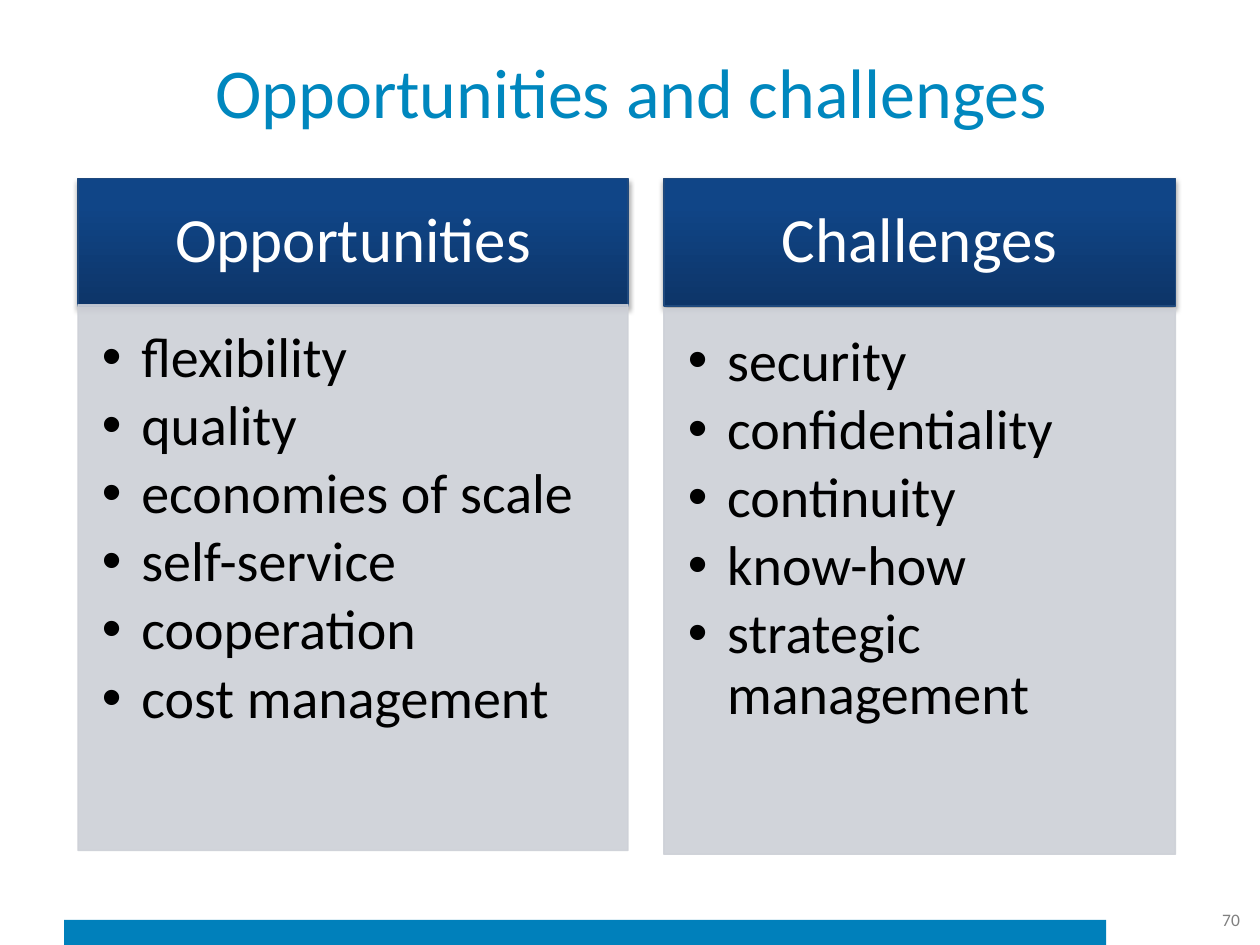
from lxml.etree import SubElement
from pptx import Presentation
from pptx.dml.color import RGBColor
from pptx.enum.shapes import MSO_SHAPE
from pptx.enum.text import MSO_ANCHOR, PP_ALIGN
from pptx.oxml.ns import qn
from pptx.util import Pt

COLORS = {
    "bar": "0080BB", "title": "0087BE", "number": "808080",
    "dark": "0D3568", "mid": "104587", "light": "0E458A",
    "edge": "1F497D", "panel": "CDD0D7", "white": "FFFFFF", "black": "000000",
}
STOPS = ((0, "dark"), (80, "mid"), (100, "light"))
HEADER_TOP, HEADER_H, BODY_H = 102.2, 72.7, 311.8
COLUMNS = (
    ("Challenges", 379.4, 292.3, 176.4,
     ("security", "confidentiality", "continuity", "know-how",
      "strategic management")),
    ("Opportunities", 44.6, 314.3, 174.2,
     ("flexibility", "quality", "economies of scale", "self-service",
      "cooperation", "cost management")),
)


def rgb(name):
    """Return the named colour."""
    return RGBColor.from_string(COLORS[name])


def sub(parent, tag, **attrs):
    """Append a DrawingML element with attributes."""
    return SubElement(parent, qn(tag), {k: str(v) for k, v in attrs.items()})


def apply(obj, **values):
    """Set several attributes on an object."""
    for name, value in values.items():
        setattr(obj, name, value)


def add_run(p, text, size, color):
    """Add a formatted run to a paragraph."""
    r = p.add_run()
    r.text = text
    apply(r.font, size=Pt(size), name="Calibri")
    r.font.color.rgb = rgb(color)


def set_frame(tf, anchor, left, top, right, bottom):
    """Set wrapping, anchor and insets of a text frame."""
    apply(tf, word_wrap=True, vertical_anchor=anchor,
          margin_left=Pt(left), margin_top=Pt(top),
          margin_right=Pt(right), margin_bottom=Pt(bottom))


def add_rect(s, box, fill, line=None):
    """Add a plain rectangle without shadow."""
    sp = s.shapes.add_shape(MSO_SHAPE.RECTANGLE, *map(Pt, box))
    sp.fill.solid()
    sp.fill.fore_color.rgb = rgb(fill)
    if line:
        sp.line.color.rgb = rgb(line)
        sp.line.width = Pt(0.75)
    else:
        sp.line.fill.background()
    sp.shadow.inherit = False
    return sp


def add_gradient(sp):
    """Replace the solid fill by the vertical header gradient."""
    sp_pr = sp._element.spPr
    solid = sp_pr.find(qn("a:solidFill"))
    grad = sub(sp_pr, "a:gradFill", rotWithShape=1)
    stops = sub(grad, "a:gsLst")
    for pos, color in STOPS:
        gs = sub(stops, "a:gs", pos=pos * 1000)
        sub(gs, "a:srgbClr", val=COLORS[color])
    sub(grad, "a:lin", ang=270 * 60000, scaled=0)
    sp_pr.replace(solid, grad)


def add_shadow(sp):
    """Add a soft shadow below the shape."""
    effects = sp._element.spPr.find(qn("a:effectLst"))
    shadow = sub(effects, "a:outerShdw", blurRad=Pt(3.1), dist=Pt(1.8),
                 dir=90 * 60000, rotWithShape=0)
    clr = sub(shadow, "a:srgbClr", val=COLORS["black"])
    sub(clr, "a:alpha", val=35000)


def add_header(s, text, box):
    """Add a column header."""
    sp = add_rect(s, box, "mid", "edge")
    add_gradient(sp)
    add_shadow(sp)
    set_frame(sp.text_frame, MSO_ANCHOR.MIDDLE, 20.2, 11.5, 20.2, 11.5)
    p = sp.text_frame.paragraphs[0]
    apply(p, alignment=PP_ALIGN.CENTER, line_spacing=0.9)
    add_run(p, text, 36, "white")


def add_body(s, items, box):
    """Add a translucent panel with a bulleted list."""
    sp = add_rect(s, box, "panel", "panel")
    for clr in sp._element.spPr.iter(qn("a:srgbClr")):
        sub(clr, "a:alpha", val=90000)
    tf = sp.text_frame
    set_frame(tf, MSO_ANCHOR.TOP, 13.7, 13.7, 18, 20.2)
    for i, item in enumerate(items):
        p = tf.add_paragraph() if i else tf.paragraphs[0]
        apply(p, alignment=PP_ALIGN.LEFT, level=1, line_spacing=0.9,
              space_after=Pt(4.4))
        p_pr = p._p.get_or_add_pPr()
        p_pr.set("marL", str(Pt(22.5)))
        p_pr.set("indent", str(Pt(-22.5)))
        sub(p_pr, "a:buFont", typeface="Arial")
        sub(p_pr, "a:buChar", char="•")
        add_run(p, item, 32, "black")


def set_title(s, text):
    """Place and format the title."""
    sp = s.shapes.title
    apply(sp, left=Pt(36.7), top=Pt(15.1), width=Pt(648), height=Pt(72.7))
    set_frame(sp.text_frame, MSO_ANCHOR.MIDDLE, 7.2, 3.6, 7.2, 3.6)
    p = sp.text_frame.paragraphs[0]
    p.alignment = PP_ALIGN.CENTER
    add_run(p, text, 40, "title")


def add_number(s, text):
    """Add the page number."""
    sp = s.shapes.add_textbox(Pt(656.6), Pt(511.2), Pt(59), Pt(28.8))
    set_frame(sp.text_frame, MSO_ANCHOR.MIDDLE, 7.2, 3.6, 7.2, 3.6)
    p = sp.text_frame.paragraphs[0]
    p.alignment = PP_ALIGN.RIGHT
    add_run(p, text, 10, "number")


def main():
    """Build and save the slide."""
    prs = Presentation()
    apply(prs, slide_width=Pt(720), slide_height=Pt(540))
    s = prs.slides.add_slide(prs.slide_layouts[5])
    add_rect(s, (36.7, 525.6, 595.4, 14.4), "bar")
    set_title(s, "Opportunities and challenges")
    add_number(s, "70")
    for name, left, width, body_top, items in COLUMNS:
        add_header(s, name, (left, HEADER_TOP, width, HEADER_H))
        add_body(s, items, (left, body_top, width, BODY_H))
    prs.save("out.pptx")


if __name__ == "__main__":
    main()
